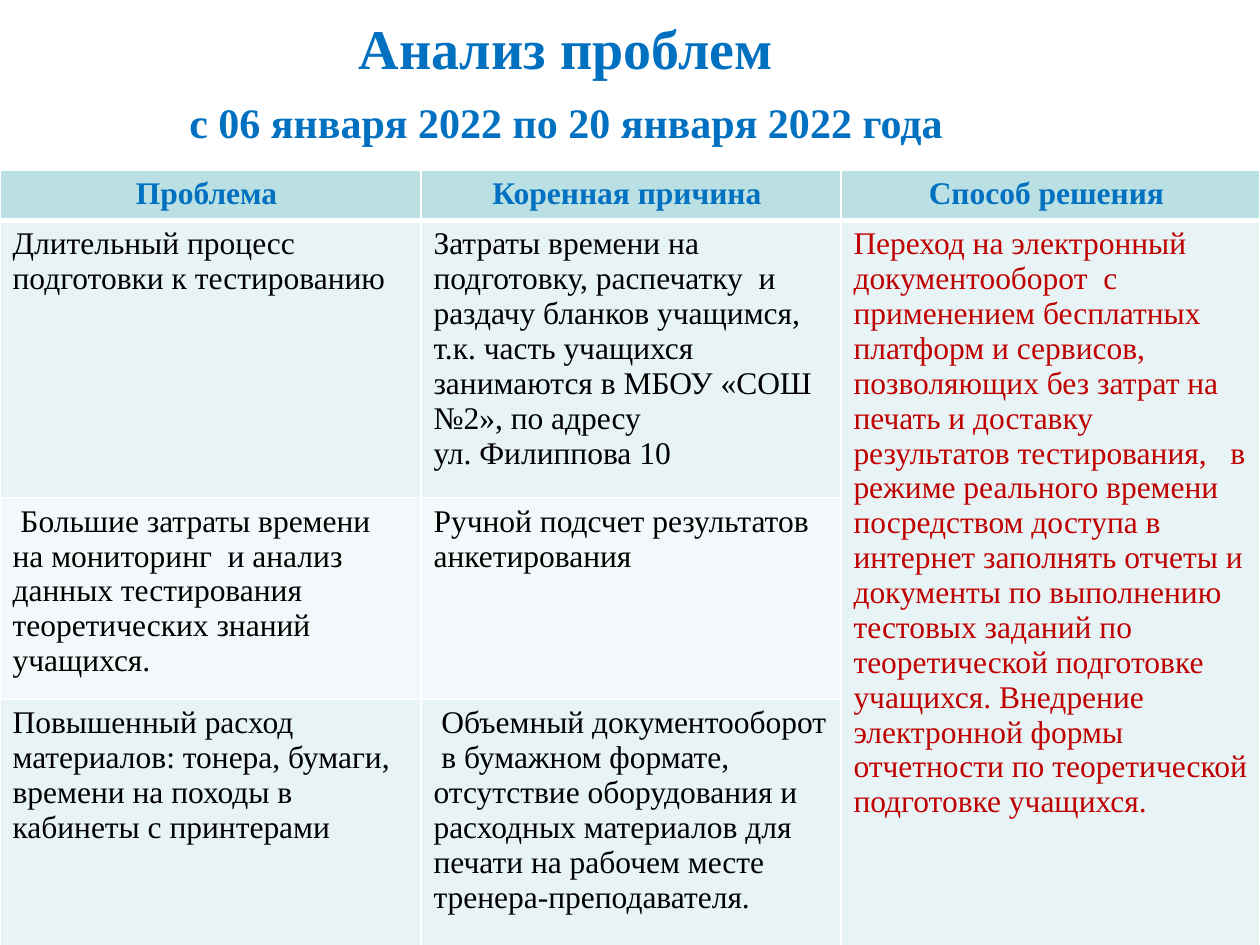
from dataclasses import dataclass

from lxml.etree import SubElement
from pptx import Presentation
from pptx.dml.color import RGBColor
from pptx.enum.text import MSO_ANCHOR, PP_ALIGN as Align
from pptx.oxml.ns import qn
from pptx.util import Emu, Pt

PX_PER_INCH = 126
FONT = "Times New Roman"
BLUE, RED, BLACK, WHITE = "0070C0", "C00000", "000000", "FFFFFF"
HEADER_FILL, ODD_FILL, EVEN_FILL = "BBE0E3", "E7F3F4", "F3F9FA"


@dataclass
class Line:
    text: str
    size: int = 18
    color: str = BLACK
    bold: bool = False
    align: Align = Align.LEFT
    before: int = 0


def px(n: int) -> Emu:
    return Emu(round(n * 914400 / PX_PER_INCH))


def rgb(value: str) -> RGBColor:
    return RGBColor.from_string(value)


def write(tf, lines: list[Line]) -> None:
    for i, line in enumerate(lines):
        p = tf.add_paragraph() if i else tf.paragraphs[0]
        p.alignment = line.align
        if line.before:
            p.space_before = Pt(line.before)
        r = p.add_run()
        r.text = line.text
        style = {"name": FONT, "size": Pt(line.size), "bold": line.bold}
        for key, value in style.items():
            setattr(r.font, key, value)
        r.font.color.rgb = rgb(line.color)


def set_borders(cell, widths: dict[str, int]) -> None:
    tc_pr = cell._tc.get_or_add_tcPr()
    for side, width in widths.items():
        ln = SubElement(tc_pr, qn(f"a:ln{side}"), w=str(Pt(width)))
        fill = SubElement(ln, qn("a:solidFill"))
        SubElement(fill, qn("a:srgbClr"), val=WHITE)


def header(text: str) -> list[Line]:
    return [Line(text, color=BLUE, bold=True, align=Align.CENTER)]


def body(*texts: str, color: str = BLACK) -> list[Line]:
    return [Line(text, color=color) for text in texts]


TITLE = [
    Line("Анализ проблем", 32, BLUE, True, Align.CENTER),
    Line("с 06 января 2022 по 20 января 2022 года", 24, BLUE, True, Align.CENTER, before=9),
]
COLUMNS = [421, 420, 419]
ROWS = [50, 276, 201, 307]
CELLS = [
    [header("Проблема "), header("Коренная причина "), header("Способ решения ")],
    [
        body("Длительный процесс подготовки к тестированию"),
        body("Затраты времени на подготовку, распечатку  и раздачу бланков учащимся, "
             "т.к. часть учащихся занимаются в МБОУ «СОШ №2», по адресу",
             "ул. Филиппова 10"),
        body("Переход на электронный документооборот  с применением бесплатных  платформ "
             "и сервисов, позволяющих без затрат на печать и доставку результатов "
             "тестирования,   в режиме реального времени  посредством доступа в интернет "
             "заполнять отчеты и документы по выполнению тестовых заданий по теоретической "
             "подготовке учащихся. Внедрение электронной формы отчетности по теоретической "
             "подготовке учащихся.", color=RED),
    ],
    [
        body(" Большие затраты времени на мониторинг  и анализ данных тестирования "
             "теоретических знаний учащихся."),
        body("Ручной подсчет результатов  анкетирования"),
    ],
    [
        body("Повышенный расход материалов: тонера, бумаги, времени на походы "
             "в кабинеты с принтерами"),
        body(" Объемный документооборот  в бумажном формате, отсутствие оборудования "
             "и расходных материалов для печати на рабочем месте тренера-преподавателя."),
    ],
]


def add_title(s) -> None:
    tf = s.shapes.add_textbox(px(120), px(0), px(892), px(217)).text_frame
    tf.word_wrap = True
    tf.vertical_anchor = MSO_ANCHOR.TOP
    tf.margin_top = px(14)
    write(tf, TITLE)


def add_problem_table(s) -> None:
    table = s.shapes.add_table(len(ROWS), len(COLUMNS), px(0), px(170),
                               px(sum(COLUMNS)), px(sum(ROWS))).table
    for column, width in zip(table.columns, COLUMNS):
        column.width = px(width)
    for row, height in zip(table.rows, ROWS):
        row.height = px(height)

    # Borders and banded fills
    for i in range(len(ROWS)):
        for j in range(len(COLUMNS)):
            cell = table.cell(i, j)
            set_borders(cell, {"L": 1, "R": 1, "T": 3 if i == 1 else 1, "B": 3 if i == 0 else 1})
            cell.fill.solid()
            fill = HEADER_FILL if i == 0 else ODD_FILL if i % 2 else EVEN_FILL
            cell.fill.fore_color.rgb = rgb(fill)

    # One solution spans all the problems
    table.cell(1, 2).merge(table.cell(3, 2))
    for i, row in enumerate(CELLS):
        for j, lines in enumerate(row):
            write(table.cell(i, j).text_frame, lines)


def main() -> None:
    prs = Presentation()
    prs.slide_width, prs.slide_height = px(1260), px(945)
    s = prs.slides.add_slide(prs.slide_layouts[6])
    add_title(s)
    add_problem_table(s)
    prs.save("out.pptx")


if __name__ == "__main__":
    main()
